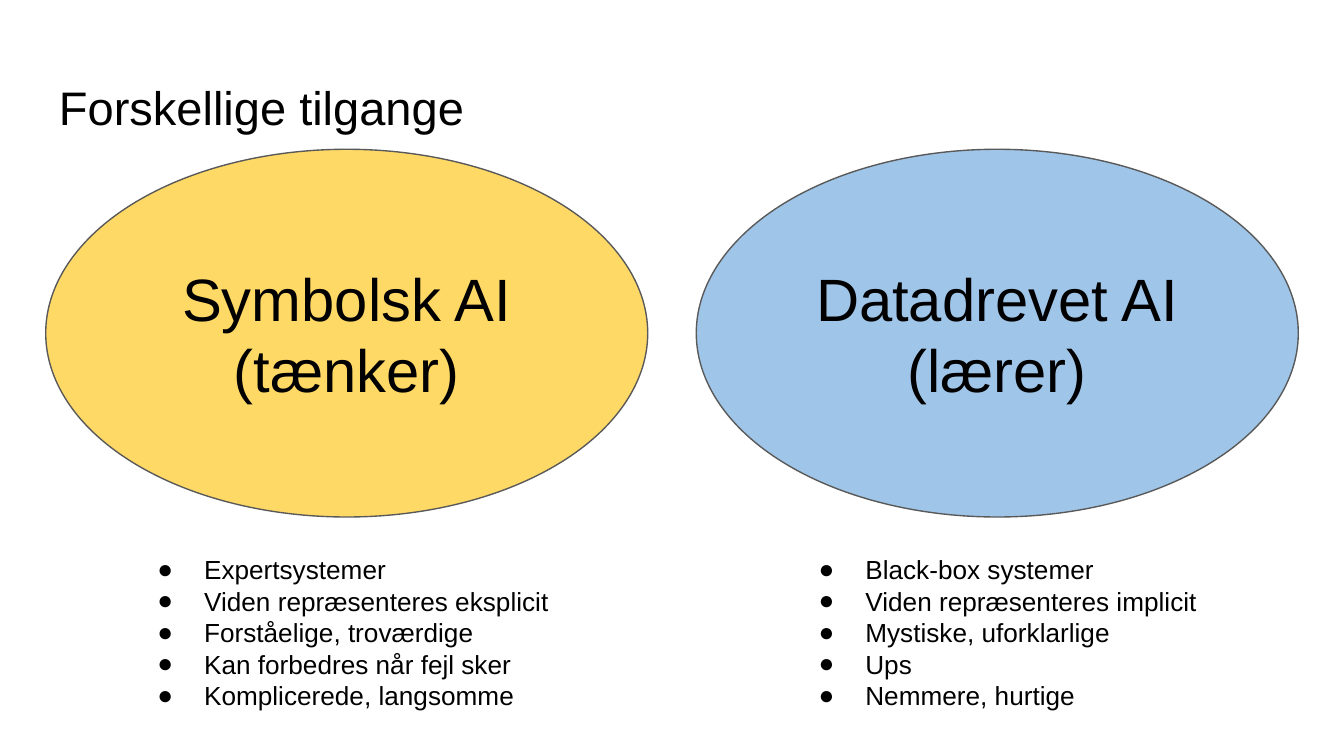
from lxml.etree import SubElement
from pptx import Presentation
from pptx.dml.color import RGBColor
from pptx.enum.shapes import MSO_SHAPE
from pptx.enum.text import MSO_ANCHOR, MSO_AUTO_SIZE, PP_ALIGN
from pptx.oxml.ns import qn
from pptx.util import Pt

TITLE = "Forskellige tilgange"
APPROACHES = [
    {
        "heading": "Symbolsk AI\v(tænker)",
        "color": "yellow",
        "traits": [
            "Expertsystemer",
            "Viden repræsenteres eksplicit",
            "Forståelige, troværdige",
            "Kan forbedres når fejl sker",
            "Komplicerede, langsomme",
        ],
        "traits_left": 66.25,
        "traits_width": 240,
    },
    {
        "heading": "Datadrevet AI\v(lærer)",
        "color": "blue",
        "traits": [
            "Black-box systemer",
            "Viden repræsenteres implicit",
            "Mystiske, uforklarlige",
            "Ups",
            "Nemmere, hurtige",
        ],
        "traits_left": 420.5,
        "traits_width": 228,
    },
]

COLORS = {"text": "000000", "outline": "595959", "yellow": "FFD966", "blue": "9FC5E8"}
FONT = "Arial"
SLIDE_WIDTH, SLIDE_HEIGHT = 720, 405
MARGIN = 24.5
TITLE_TOP, TITLE_HEIGHT = 35, 45
ELLIPSE_TOP, ELLIPSE_WIDTH, ELLIPSE_HEIGHT = 80, 322.5, 197
TRAITS_TOP, TRAITS_HEIGHT = 289.5, 99
BULLET_INDENT, BULLET_HANG = 36, 25

FRAME_FORMAT = {
    "word_wrap": True,
    "margin_left": Pt(7.2),
    "margin_right": Pt(7.2),
    "margin_top": Pt(7.2),
    "margin_bottom": Pt(7.2),
}


def rgb(name):
    return RGBColor.from_string(COLORS[name])


def write(frame, lines, size, align=PP_ALIGN.LEFT, **extra_format):
    """Fill the frame with one paragraph per line and return the paragraphs."""
    for name, value in {**FRAME_FORMAT, **extra_format}.items():
        setattr(frame, name, value)
    frame.text = "\n".join(lines)
    for paragraph in frame.paragraphs:
        paragraph.alignment = align
        for run in paragraph.runs:
            for name, value in {"name": FONT, "size": Pt(size)}.items():
                setattr(run.font, name, value)
            run.font.color.rgb = rgb("text")
    return frame.paragraphs


def add_bullet(paragraph):
    properties = paragraph._p.get_or_add_pPr()
    properties.set("marL", str(Pt(BULLET_INDENT)))
    properties.set("indent", str(-Pt(BULLET_HANG)))
    bullet_color = SubElement(properties, qn("a:buClr"))
    SubElement(bullet_color, qn("a:srgbClr"), val=COLORS["text"])
    SubElement(properties, qn("a:buFont"), typeface=FONT)
    SubElement(properties, qn("a:buChar"), char="●")


presentation = Presentation()
presentation.slide_width = Pt(SLIDE_WIDTH)
presentation.slide_height = Pt(SLIDE_HEIGHT)
slide = presentation.slides.add_slide(presentation.slide_layouts[6])

title = slide.shapes.add_textbox(
    Pt(MARGIN), Pt(TITLE_TOP), Pt(SLIDE_WIDTH - 2 * MARGIN), Pt(TITLE_HEIGHT)
)
write(title.text_frame, [TITLE], 25.2)

ellipse_step = SLIDE_WIDTH - 2 * MARGIN - ELLIPSE_WIDTH
for column, approach in enumerate(APPROACHES):
    ellipse = slide.shapes.add_shape(
        MSO_SHAPE.OVAL,
        Pt(MARGIN + column * ellipse_step), Pt(ELLIPSE_TOP),
        Pt(ELLIPSE_WIDTH), Pt(ELLIPSE_HEIGHT),
    )
    ellipse.shadow.inherit = False
    ellipse.fill.solid()
    ellipse.fill.fore_color.rgb = rgb(approach["color"])
    ellipse.line.color.rgb = rgb("outline")
    ellipse.line.width = Pt(0.75)
    write(ellipse.text_frame, [approach["heading"]], 32, PP_ALIGN.CENTER,
          vertical_anchor=MSO_ANCHOR.MIDDLE)

    traits = slide.shapes.add_textbox(
        Pt(approach["traits_left"]), Pt(TRAITS_TOP),
        Pt(approach["traits_width"]), Pt(TRAITS_HEIGHT),
    )
    for paragraph in write(traits.text_frame, approach["traits"], 14,
                           auto_size=MSO_AUTO_SIZE.SHAPE_TO_FIT_TEXT):
        add_bullet(paragraph)

presentation.save("out.pptx")
